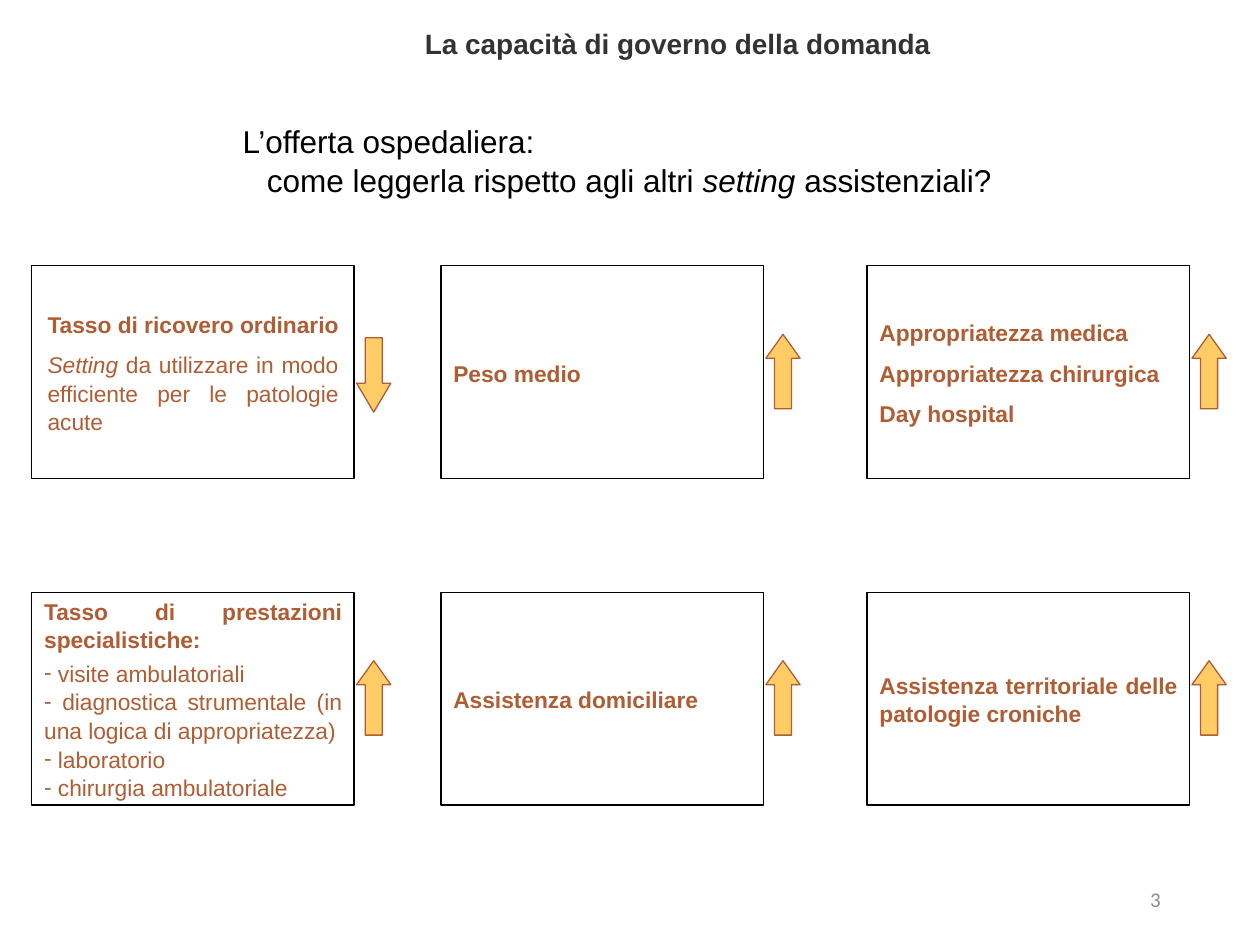
from dataclasses import dataclass

from lxml.etree import SubElement
from pptx import Presentation
from pptx.dml.color import RGBColor
from pptx.enum.shapes import MSO_SHAPE
from pptx.enum.text import MSO_ANCHOR, MSO_AUTO_SIZE, PP_ALIGN
from pptx.oxml.ns import qn
from pptx.util import Cm, Pt


@dataclass(frozen=True)
class Theme:
    font: str = "Arial"
    number_font: str = "Calibri"
    heading: str = "333333"
    black: str = "000000"
    accent: str = "B05D34"
    arrow: str = "FFCC66"
    number: str = "8C8C8C"
    title_size: float = 16
    question_size: float = 18
    box_size: float = 13
    number_size: float = 12
    line: float = 0.75
    gap: float = 6.7
    small_gap: float = 2.7


T = Theme()

# Grid of boxes, in centimetres
COLS = (0.64, 8.89, 17.48)
ROWS = (5.36, 11.94)
BOX_W, BOX_H = 6.5, 4.29
ARROW_W, ARROW_H = 0.69, 1.5


def rgb(value):
    return RGBColor.from_string(value)


def write(tf, text, size=T.box_size, color=T.accent, font=T.font, bold=False,
          italic=False, align=PP_ALIGN.JUSTIFY, before=0, indent=0,
          bullet=None, same_line=False):
    """Add a paragraph, or with same_line a run in the last paragraph."""
    p = tf.paragraphs[-1]
    if not same_line:
        if p.runs:
            p = tf.add_paragraph()
        p.alignment = align
        p.space_before = Pt(before)
        p.line_spacing = 1.05
        pPr = p._p.get_or_add_pPr()
        pPr.set("marL", str(Cm(indent)))
        pPr.set("indent", "0")
        if bullet:
            SubElement(pPr, qn("a:buChar")).set("char", bullet)
        else:
            SubElement(pPr, qn("a:buNone"))
    r = p.add_run()
    r.text = text
    f = r.font
    f.name, f.size, f.bold, f.italic = font, Pt(size), bold, italic
    f.color.rgb = rgb(color)


def place(sp, x, y, w, h):
    sp.left, sp.top, sp.width, sp.height = Cm(x), Cm(y), Cm(w), Cm(h)


def frame(sp, anchor=MSO_ANCHOR.MIDDLE, wrap=True, inset=0.25):
    tf = sp.text_frame
    tf.auto_size = MSO_AUTO_SIZE.NONE
    tf.word_wrap = wrap
    tf.vertical_anchor = anchor
    tf.margin_left = tf.margin_right = Cm(inset)
    return tf


def text_box(s, x, y, w, h, **options):
    return frame(s.shapes.add_textbox(Cm(x), Cm(y), Cm(w), Cm(h)), **options)


def box(s, col, row, sp=None, **options):
    """Outline a grid cell, with a given placeholder or a new rectangle."""
    if sp is None:
        sp = s.shapes.add_shape(MSO_SHAPE.RECTANGLE, 0, 0, 0, 0)
        sp.shadow.inherit = False
    place(sp, COLS[col], ROWS[row], BOX_W, BOX_H)
    sp.fill.background()
    sp.line.color.rgb = rgb(T.black)
    sp.line.width = Pt(T.line)
    return frame(sp, **options)


def arrow(s, col, row, down=False):
    """Put a trend arrow to the right of a grid cell."""
    kind, head, dy = ((MSO_SHAPE.DOWN_ARROW, 0.847, 1.45) if down
                      else (MSO_SHAPE.UP_ARROW, 0.701, 1.38))
    sp = s.shapes.add_shape(kind, Cm(COLS[col] + BOX_W + 0.05),
                            Cm(ROWS[row] + dy), Cm(ARROW_W), Cm(ARROW_H))
    sp.adjustments[0], sp.adjustments[1] = 0.5, head
    sp.shadow.inherit = False
    sp.fill.solid()
    sp.fill.fore_color.rgb = rgb(T.arrow)
    sp.line.color.rgb = rgb(T.accent)
    sp.line.width = Pt(T.line)


def main():
    prs = Presentation()
    prs.slide_width, prs.slide_height = Cm(25.4), Cm(19.05)
    s = prs.slides.add_slide(prs.slide_layouts[1])
    title, body = s.placeholders

    # Title
    place(title, 4.85, 0.38, 17.63, 0.94)
    write(frame(title), "La capacità di governo della domanda", bold=True,
          size=T.title_size, color=T.heading, align=PP_ALIGN.CENTER)

    # Question
    tf = text_box(s, 4.19, 2.29, 16.99, 1.8, anchor=MSO_ANCHOR.TOP)
    look = dict(size=T.question_size, color=T.black)
    write(tf, "L’offerta ospedaliera:", align=PP_ALIGN.LEFT, indent=0.45,
          **look)
    write(tf, "come leggerla rispetto agli altri ", align=PP_ALIGN.CENTER,
          **look)
    write(tf, "setting", italic=True, same_line=True, **look)
    write(tf, " assistenziali?", same_line=True, **look)

    # Top row: hospital care
    tf = box(s, 0, 0, inset=0.32)
    write(tf, "Tasso di ricovero ordinario", bold=True)
    write(tf, "Setting", italic=True, before=T.gap)
    write(tf, " da utilizzare in modo efficiente per le patologie acute",
          same_line=True)
    write(box(s, 1, 0, wrap=False), "Peso medio", bold=True)
    tf = box(s, 2, 0, wrap=False)
    write(tf, "Appropriatezza medica", bold=True)
    for text in ("Appropriatezza chirurgica", "Day hospital"):
        write(tf, text, bold=True, before=T.gap)

    # Bottom row: other settings
    tf = box(s, 0, 1, sp=body)
    write(tf, "Tasso di prestazioni specialistiche:", bold=True)
    services = ("visite ambulatoriali",
                "diagnostica strumentale (in una logica di appropriatezza)",
                "laboratorio", "chirurgia ambulatoriale")
    for i, text in enumerate(services):
        write(tf, " " + text, bullet="-", before=0 if i else T.small_gap)
    write(box(s, 1, 1), "Assistenza domiciliare", bold=True)
    write(box(s, 2, 1), "Assistenza territoriale delle patologie croniche",
          bold=True)

    # Trend arrows: only ordinary admissions go down
    for row in range(len(ROWS)):
        for col in range(len(COLS)):
            arrow(s, col, row, down=(col, row) == (0, 0))

    # Slide number
    write(text_box(s, 17.93, 17.6, 5.72, 1.02), "3", size=T.number_size,
          color=T.number, font=T.number_font, align=PP_ALIGN.RIGHT)

    prs.save("out.pptx")


if __name__ == "__main__":
    main()
